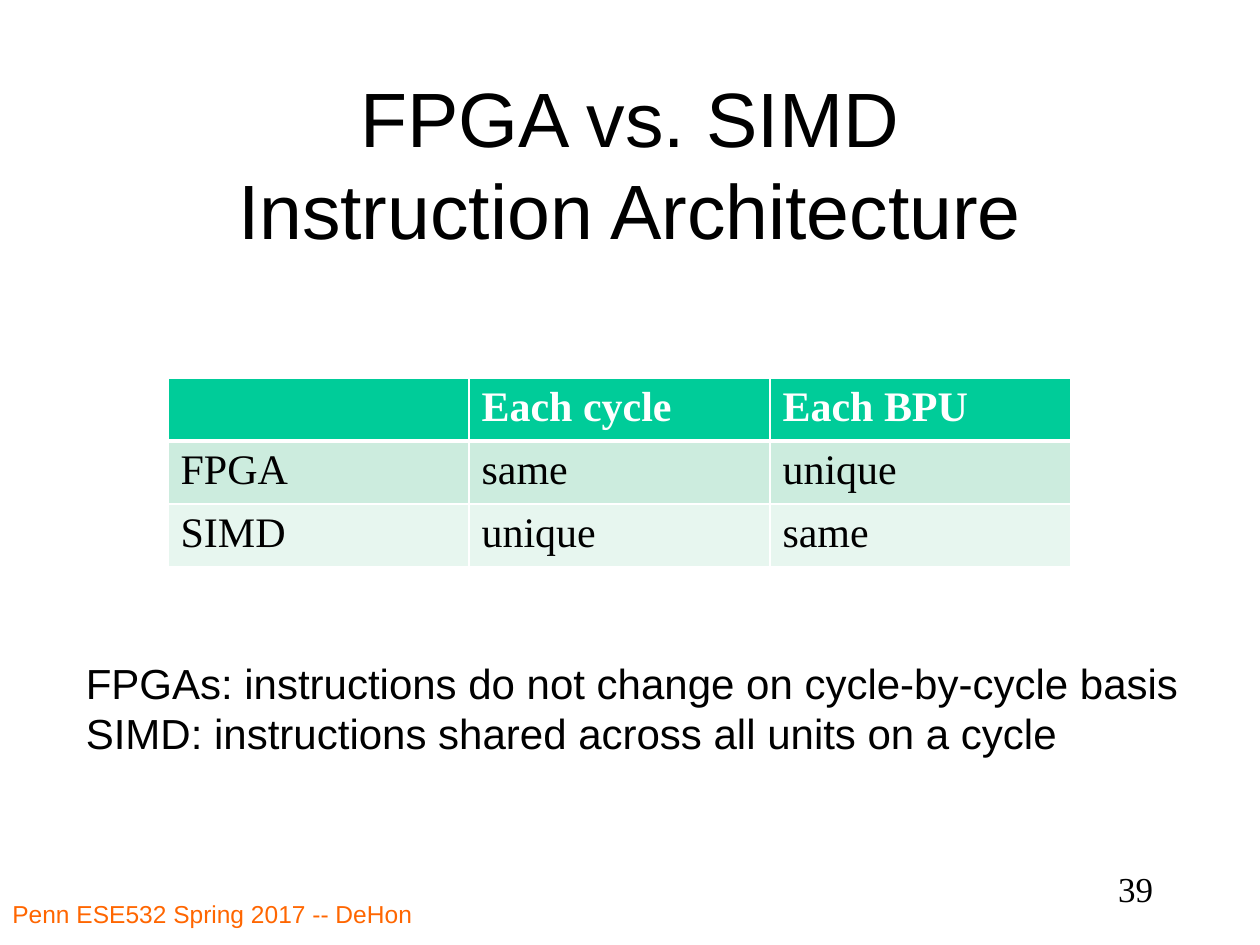
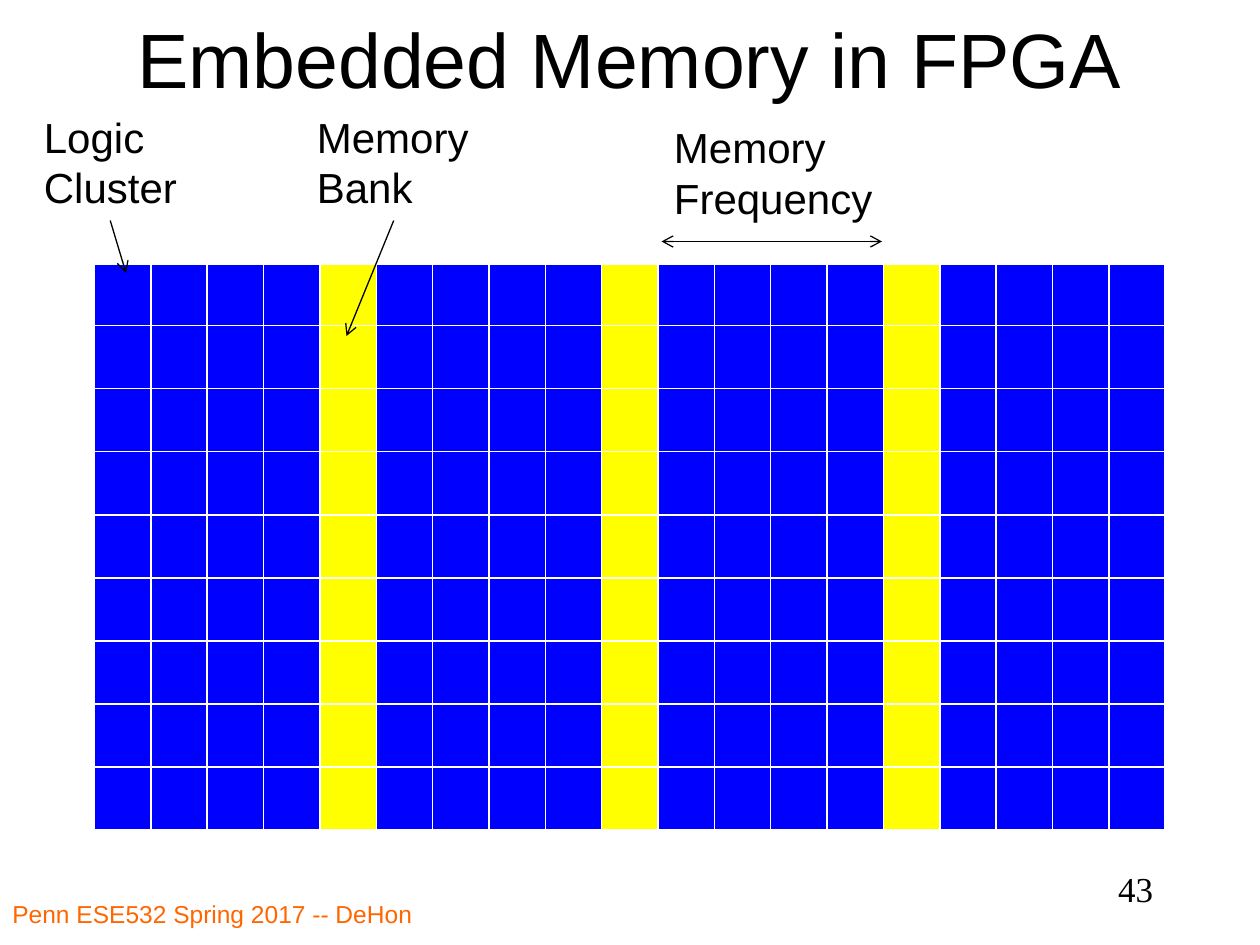
import pptx
import pptx.util
import pptx.dml.color
import pptx.enum.shapes
import pptx.enum.text
import pptx.oxml.ns
from lxml import etree

COLORS = {
    "ink": "000000", "paper": "FFFFFF", "footer": "FF6600",
    "header": "00CC99", "band": "CCECDE", "light_band": "E7F6EF",
    "logic": "0000FF", "memory": "FFFF00",
}
SANS, SERIF = "Arial", "Times New Roman"
ALIGN = pptx.enum.text.PP_ALIGN
ANCHOR = pptx.enum.text.MSO_ANCHOR
qn = pptx.oxml.ns.qn

deck = pptx.Presentation()
deck.slide_width, deck.slide_height = pptx.util.Inches(10), pptx.util.Inches(7.5)
# The slide is a grid of 120 columns by 90 rows of square units
UNIT = deck.slide_width // 120


def write(frame, text, size=24, font=SANS, color="ink", bold=False,
          align=ALIGN.LEFT, anchor=ANCHOR.TOP, wrap=True):
    frame.word_wrap = wrap
    frame.vertical_anchor = anchor
    if not wrap:
        frame.auto_size = pptx.enum.text.MSO_AUTO_SIZE.SHAPE_TO_FIT_TEXT
    frame.text = text
    for line in frame.paragraphs:
        line.alignment = align
        for run in line.runs:
            run.font.size, run.font.name, run.font.bold = pptx.util.Pt(size), font, bold
            run.font.color.rgb = pptx.dml.color.RGBColor.from_string(COLORS[color])
        if not text:  # an empty cell keeps its line height
            end = etree.SubElement(line._p, qn("a:endParaRPr"), sz=str(size * 100))
            etree.SubElement(end, qn("a:latin"), typeface=font)


def ruled_table(slide, left, top, width, rows, fills):
    """Rows of text and matching fills, with white rules, heavy under the header."""
    row_height = pptx.util.Inches(0.41)
    grid = slide.shapes.add_table(len(rows), len(rows[0]), int(left * UNIT), int(top * UNIT),
                                  int(width * UNIT), row_height * len(rows)).table
    for r, row in enumerate(rows):
        for c, text in enumerate(row):
            cell = grid.cell(r, c)
            header = r == 0
            write(cell.text_frame, text, font=SERIF, bold=header,
                  color="paper" if header else "ink")
            for side in "LRTB":
                heavy = (r, side) in ((0, "B"), (1, "T"))
                rule = etree.SubElement(cell._tc.get_or_add_tcPr(), qn("a:ln" + side),
                                        w=str(pptx.util.Pt(3 if heavy else 1)))
                paint = etree.SubElement(rule, qn("a:solidFill"))
                etree.SubElement(paint, qn("a:srgbClr"), val=COLORS["paper"])
            cell.fill.solid()
            cell.fill.fore_color.rgb = pptx.dml.color.RGBColor.from_string(COLORS[fills[r][c]])


# Shared title, footer and page number
pages = [
    ("FPGA vs. SIMD\vInstruction Architecture", 8, 15, "39"),
    ("Embedded Memory in FPGA", 0, 11, "43"),
]
for title, title_top, title_height, number in pages:
    slide = deck.slides.add_slide(deck.slide_layouts[6])
    for box, text, style in [
        ((9, title_top, 102, title_height), title,
         dict(size=44, align=ALIGN.CENTER, anchor=ANCHOR.MIDDLE)),
        ((0, 85, 55, 5), "Penn ESE532 Spring 2017 -- DeHon", dict(size=14, color="footer")),
        ((86, 82, 25, 6), number, dict(size=20, font=SERIF, align=ALIGN.RIGHT)),
    ]:
        write(slide.shapes.add_textbox(*(n * UNIT for n in box)).text_frame, text, **style)
comparison, memory_map = deck.slides

# Comparison table
ruled_table(comparison, 16, 36, 86,
            [["", "Each cycle", "Each BPU"],
             ["FPGA", "same", "unique"],
             ["SIMD", "unique", "same"]],
            [[fill] * 3 for fill in ("header", "band", "light_band")])

# Array of logic clusters: every fifth column is memory
COLUMNS, ROWS = 19, 9
array_row = ["memory" if c % 5 == 4 else "logic" for c in range(COLUMNS)]
ruled_table(memory_map, 9, 19, 102, [[""] * COLUMNS] * (ROWS + 1),
            [["paper"] * COLUMNS] + [array_row] * ROWS)

# Arrows from the labels into the array, and the span between memory columns
for x1, y1, x2, y2, ends in [
    (37.5, 21, 33, 32, ["tailEnd"]),
    (10.5, 21, 12, 26, ["tailEnd"]),
    (63, 23, 84, 23, ["headEnd", "tailEnd"]),
]:
    arrow = memory_map.shapes.add_connector(
        pptx.enum.shapes.MSO_CONNECTOR.STRAIGHT, *(int(n * UNIT) for n in (x1, y1, x2, y2)))
    arrow.line.width = pptx.util.Pt(0.75)
    arrow.line.color.rgb = pptx.dml.color.RGBColor.from_string(COLORS["ink"])
    for end in ends:
        etree.SubElement(arrow.line._get_or_add_ln(), qn("a:" + end), type="arrow")
    etree.SubElement(arrow._element.spPr, qn("a:effectLst"))

# Remarks and labels
for slide, left, top, width, text in [
    (comparison, 7, 62, 107.5, "FPGAs: instructions do not change on cycle-by-cycle basis\n"
                               "SIMD: instructions shared across all units on a cycle"),
    (memory_map, 3, 10, 15.2, "Logic\nCluster"),
    (memory_map, 29, 10, 17, "Memory\nBank"),
    (memory_map, 63, 11, 21.5, "Memory\nFrequency"),
]:
    label = slide.shapes.add_textbox(left * UNIT, top * UNIT, int(width * UNIT), 11 * UNIT)
    write(label.text_frame, text, wrap=False)

deck.save("out.pptx")
